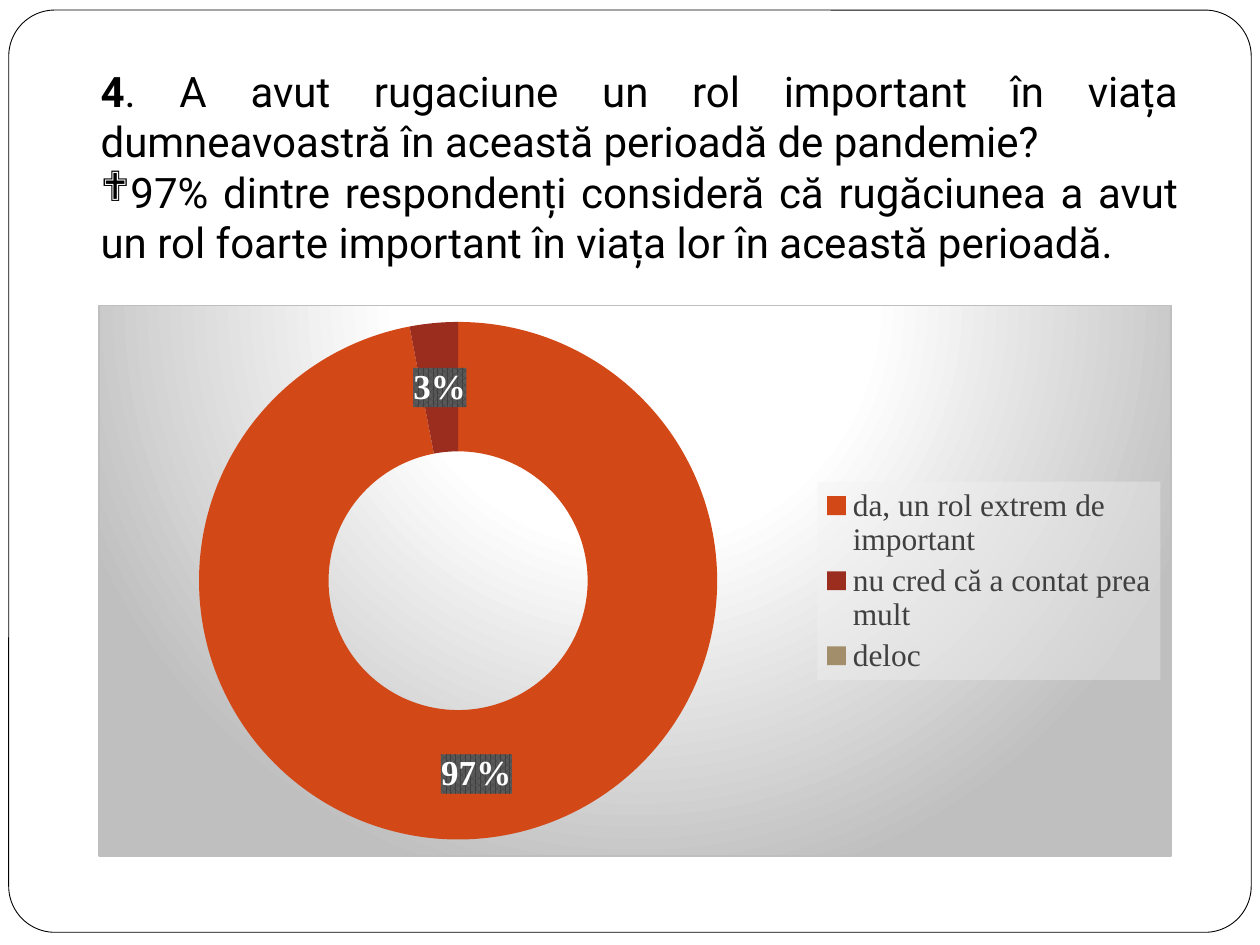
from pptx import Presentation
from pptx.chart.data import CategoryChartData
from pptx.dml.color import RGBColor
from pptx.enum.chart import XL_CHART_TYPE, XL_LEGEND_POSITION
from pptx.enum.shapes import MSO_SHAPE
from pptx.enum.text import PP_ALIGN
from pptx.oxml import parse_xml
from pptx.util import Pt

COLORS = {
    "paper": "FFFFFF", "ink": "000000", "legend": "404040",
    "edge": "BFBFBF", "tag_dark": "404040", "tag_light": "595959",
    "legend_back": "F2F2F2",
    "important": "D34817", "minor": "9B2D1F", "none": "A28E6A",
}
ANSWERS = [
    ("da, un rol extrem de important", 97, "important"),
    ("nu cred că a contat prea mult", 3, "minor"),
    ("deloc", 0, "none"),
]
QUESTION = [
    ("4", True),
    (". A avut rugaciune un rol important în viața dumneavoastră "
     "în această perioadă de pandemie?", False),
]
FINDING = [
    ("97% dintre respondenți consideră că rugăciunea a avut un rol foarte "
     "important în viața lor în această perioadă.", False),
]
NAMESPACES = (
    'xmlns:c="http://schemas.openxmlformats.org/drawingml/2006/chart" '
    'xmlns:a="http://schemas.openxmlformats.org/drawingml/2006/main"'
)


def rgb(name):
    """Return the named colour."""
    return RGBColor.from_string(COLORS[name])


def element(tag, content="", attributes=""):
    """Build one XML element in the chart and drawing namespaces."""
    return parse_xml(f"<{tag} {NAMESPACES} {attributes}>{content}</{tag}>")


def color_xml(name, alpha=100):
    """Return the XML of a colour with an opacity in percent."""
    return (f'<a:srgbClr val="{COLORS[name]}">'
            f'<a:alpha val="{alpha * 1000}"/></a:srgbClr>')


def manual_layout(x, y, w, h, target=""):
    """Build a chart layout from fractions of the chart's box."""
    modes = '<c:xMode val="edge"/><c:yMode val="edge"/>'
    sizes = "".join(f'<c:{key} val="{size}"/>'
                    for key, size in zip("xywh", (x, y, w, h)))
    return element("c:layout",
                   f"<c:manualLayout>{target}{modes}{sizes}</c:manualLayout>")


def remove_layout(parent):
    """Drop the automatic layout of a chart part."""
    for layout in parent.xpath("c:layout"):
        parent.remove(layout)


def style_font(font, size, color, face, bold=False):
    """Set the size, colour, face and weight of a font."""
    font.size, font.name, font.bold = Pt(size), face, bold
    font.color.rgb = rgb(color)


def add_frame(slide, left, top, width, height):
    """Draw the rounded outline around the slide."""
    frame = slide.shapes.add_shape(MSO_SHAPE.ROUNDED_RECTANGLE,
                                   left, top, width, height)
    frame.adjustments[0] = 0.05
    frame.shadow.inherit = False
    frame.fill.solid()
    frame.fill.fore_color.rgb = rgb("paper")
    frame.line.color.rgb = rgb("ink")
    frame.line.width = Pt(0.5)


def add_question(slide, left, top, width, height):
    """Write the survey question and its bulleted finding."""
    text = slide.shapes.add_textbox(left, top, width, height).text_frame
    text.word_wrap = True
    finding = text.add_paragraph()
    for paragraph, parts in zip(text.paragraphs, (QUESTION, FINDING)):
        paragraph.alignment = PP_ALIGN.JUSTIFY
        for words, bold in parts:
            run = paragraph.add_run()
            run.text = words
            style_font(run.font, 24, "ink", "Roboto", bold)
    bullet = finding._p.get_or_add_pPr()
    bullet.append(element("a:buFont", attributes='typeface="Wingdings" charset="2"'))
    bullet.append(element("a:buChar", attributes='char="❖"'))


def style_backdrop(chart):
    """Give the chart its radial gradient and thin border."""
    stops = "".join(
        f'<a:gs pos="{pos * 1000}">{color_xml(name)}</a:gs>'
        for pos, name in ((0, "paper"), (39, "paper"), (100, "edge")))
    backdrop = element(
        "c:spPr",
        f'<a:gradFill><a:gsLst>{stops}</a:gsLst><a:path path="circle">'
        '<a:fillToRect l="50000" t="-80000" r="50000" b="180000"/>'
        '</a:path></a:gradFill>'
        f'<a:ln w="{Pt(0.75)}"><a:solidFill>{color_xml("edge")}'
        '</a:solidFill></a:ln>')
    chart.element.xpath("c:chart")[0].addnext(backdrop)


def style_legend(chart):
    """Place the legend at the right on a translucent panel."""
    chart.has_legend = True
    legend = chart.legend
    legend.position = XL_LEGEND_POSITION.RIGHT
    legend.include_in_layout = False
    style_font(legend.font, 18, "legend", "Times New Roman")
    root = chart.element.xpath("c:chart/c:legend")[0]
    remove_layout(root)
    root.xpath("c:legendPos")[0].addnext(
        manual_layout(0.67, 0.32, 0.32, 0.36))
    root.xpath("c:txPr")[0].addprevious(element(
        "c:spPr",
        f'<a:solidFill>{color_xml("legend_back", 39)}</a:solidFill>'))


def style_rings(chart):
    """Colour the ring segments and label those that have a share."""
    series = chart.plots[0].series[0]
    labels = series.data_labels
    labels.show_percentage = True
    labels.show_value = False
    labels.number_format = "0%"
    labels.number_format_is_linked = False
    style_font(labels.font, 20, "paper", "Times New Roman", True)
    root = chart.element.xpath(".//c:ser/c:dLbls")[0]
    root.xpath("c:txPr")[0].addprevious(element(
        "c:spPr",
        f'<a:pattFill prst="pct75"><a:fgClr>{color_xml("tag_dark")}</a:fgClr>'
        f'<a:bgClr>{color_xml("tag_light")}</a:bgClr></a:pattFill>'))
    for index, (_, share, color) in enumerate(ANSWERS):
        segment = series.points[index].format
        segment.fill.solid()
        segment.fill.fore_color.rgb = rgb(color)
        segment.line.fill.background()
        if share == 0:
            root.insert(0, element(
                "c:dLbl", f'<c:idx val="{index}"/><c:delete val="1"/>'))


def add_answers(slide, left, top, width, height):
    """Chart the answers as a doughnut."""
    answers = CategoryChartData()
    answers.categories = [answer for answer, _, _ in ANSWERS]
    answers.add_series("Series 1", [share for _, share, _ in ANSWERS])
    chart = slide.shapes.add_chart(XL_CHART_TYPE.DOUGHNUT, left, top,
                                   width, height, answers).chart
    chart.has_title = False
    style_font(chart.font, 10, "ink", "Times New Roman")
    chart.plots[0].vary_by_categories = True
    plot_area = chart.element.xpath("c:chart/c:plotArea")[0]
    remove_layout(plot_area)
    plot_area.insert(0, manual_layout(0.09, 0.03, 0.49, 0.94,
                                      '<c:layoutTarget val="inner"/>'))
    style_backdrop(chart)
    style_legend(chart)
    style_rings(chart)


def main():
    """Build the survey slide and save it."""
    deck = Presentation()
    deck.slide_width, deck.slide_height = Pt(720), Pt(540)
    slide = deck.slides.add_slide(deck.slide_layouts[6])
    add_frame(slide, Pt(5), Pt(5.75), Pt(710), Pt(527))
    add_question(slide, Pt(50.4), Pt(33.8), Pt(630), Pt(152.6))
    add_answers(slide, Pt(56.2), Pt(174.2), Pt(613.4), Pt(315.4))
    deck.save("out.pptx")


if __name__ == "__main__":
    main()
